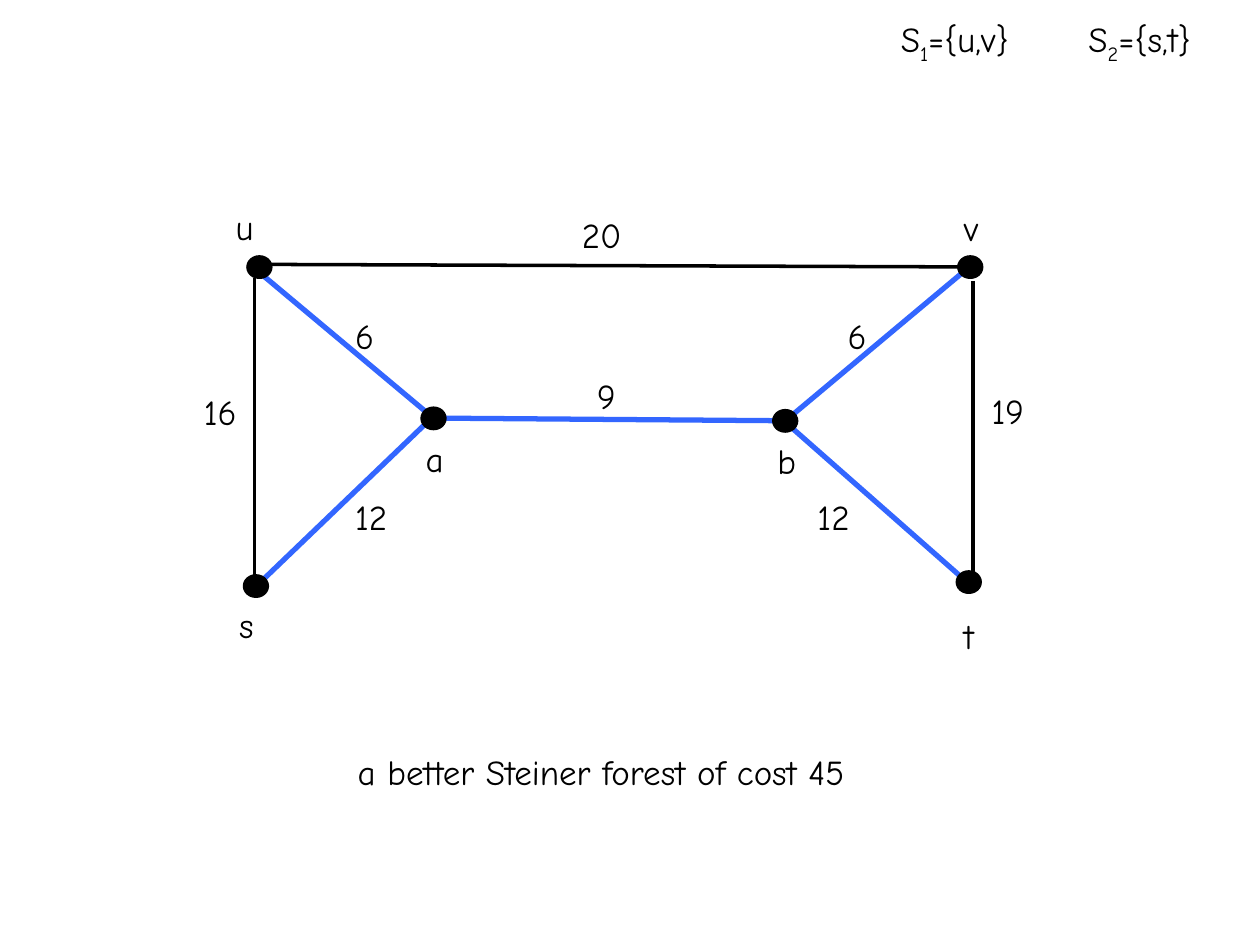
from typing import NamedTuple

import pptx
import pptx.dml.color
import pptx.enum.shapes
import pptx.enum.text
import pptx.oxml.ns
import pptx.util
from lxml import etree

Cm = pptx.util.Cm
Pt = pptx.util.Pt

FONT = "Comic Neue"
BLACK, BLUE = "000000", "3366FF"
NODE_W, NODE_H = 0.46, 0.41
LABEL_H = 1.12
LETTER_W, NUMBER_W, SET_W = 0.84, 1.42, 3.25


class Node(NamedTuple):
    name: str
    x: float
    y: float
    label_x: float
    label_y: float


class Edge(NamedTuple):
    x1: float
    y1: float
    x2: float
    y2: float
    cost: str
    label_x: float
    label_y: float
    in_forest: bool = True


class TerminalSet(NamedTuple):
    index: str
    members: str
    x: float


NODES = [
    Node("u", 5.00, 5.18, 4.50, 4.01),
    Node("v", 19.33, 5.18, 19.18, 4.04),
    Node("s", 4.93, 11.61, 4.57, 12.04),
    Node("t", 19.30, 11.53, 19.18, 12.27),
    Node("a", 8.51, 8.23, 8.33, 8.69),
    Node("b", 15.60, 8.28, 15.42, 8.74),
]
EDGES = [
    Edge(5.31, 5.56, 8.56, 8.28, "6", 6.91, 6.22),
    Edge(8.97, 8.43, 15.60, 8.48, "9", 11.79, 7.42),
    Edge(15.98, 8.36, 19.41, 5.49, "6", 16.84, 6.22),
    Edge(15.98, 8.64, 19.41, 11.66, "12", 16.23, 9.86),
    Edge(8.56, 8.56, 5.31, 11.68, "12", 6.91, 9.86),
    Edge(5.13, 5.61, 5.13, 11.63, "16", 3.86, 7.75, False),
    Edge(19.61, 5.66, 19.61, 11.66, "19", 19.74, 7.72, False),
    Edge(5.38, 5.33, 19.33, 5.38, "20", 11.48, 4.17, False),
]
TERMINAL_SETS = [TerminalSet("1", "={u,v}", 17.91), TerminalSet("2", "={s,t}", 21.69)]


def rgb(color: str) -> pptx.dml.color.RGBColor:
    return pptx.dml.color.RGBColor.from_string(color)


def add_text(slide, x: float, y: float, width: float, text: str):
    """Add a one-line text box and return its paragraph."""
    tb = slide.shapes.add_textbox(Cm(x), Cm(y), Cm(width), Cm(LABEL_H))
    tf = tb.text_frame
    tf.word_wrap = True
    tf.auto_size = pptx.enum.text.MSO_AUTO_SIZE.SHAPE_TO_FIT_TEXT
    p = tf.paragraphs[0]
    p.text = text
    format_runs(p)
    return p


def format_runs(p) -> None:
    for r in p.runs:
        r.font.name = FONT
        r.font.size = Pt(20)
        r.font.color.rgb = rgb(BLACK)


def draw_edge(slide, edge: Edge) -> None:
    line = slide.shapes.add_connector(
        pptx.enum.shapes.MSO_CONNECTOR.STRAIGHT,
        Cm(edge.x1), Cm(edge.y1), Cm(edge.x2), Cm(edge.y2),
    )
    line.line.color.rgb = rgb(BLUE if edge.in_forest else BLACK)
    line.line.width = Pt(3 if edge.in_forest else 2)
    etree.SubElement(line._element.spPr, pptx.oxml.ns.qn("a:effectLst"))
    width = LETTER_W if len(edge.cost) == 1 else NUMBER_W
    add_text(slide, edge.label_x, edge.label_y, width, edge.cost)


def draw_node(slide, node: Node) -> None:
    sp = slide.shapes.add_shape(
        pptx.enum.shapes.MSO_SHAPE.OVAL,
        Cm(node.x), Cm(node.y), Cm(NODE_W), Cm(NODE_H),
    )
    sp.shadow.inherit = False
    sp.fill.solid()
    sp.fill.fore_color.rgb = rgb(BLACK)
    sp.line.color.rgb = rgb(BLACK)
    sp.line.width = Pt(2)
    add_text(slide, node.label_x, node.label_y, LETTER_W, node.name)


def draw_terminal_set(slide, terminals: TerminalSet) -> None:
    p = add_text(slide, terminals.x, 0.23, SET_W, "S")
    subscript = p.add_run()
    subscript.text = terminals.index
    p.add_run().text = terminals.members
    format_runs(p)
    subscript.font._element.set("baseline", "-25000")


def main() -> None:
    prs = pptx.Presentation()
    prs.slide_width, prs.slide_height = Cm(25.4), Cm(19.05)
    slide = prs.slides.add_slide(prs.slide_layouts[6])
    for edge in EDGES:
        draw_edge(slide, edge)
    for node in NODES:
        draw_node(slide, node)
    for terminals in TERMINAL_SETS:
        draw_terminal_set(slide, terminals)
    caption = add_text(slide, 4.83, 15.01, 14.58, "a better Steiner forest of cost 45")
    caption.alignment = pptx.enum.text.PP_ALIGN.CENTER
    prs.save("out.pptx")


if __name__ == "__main__":
    main()
